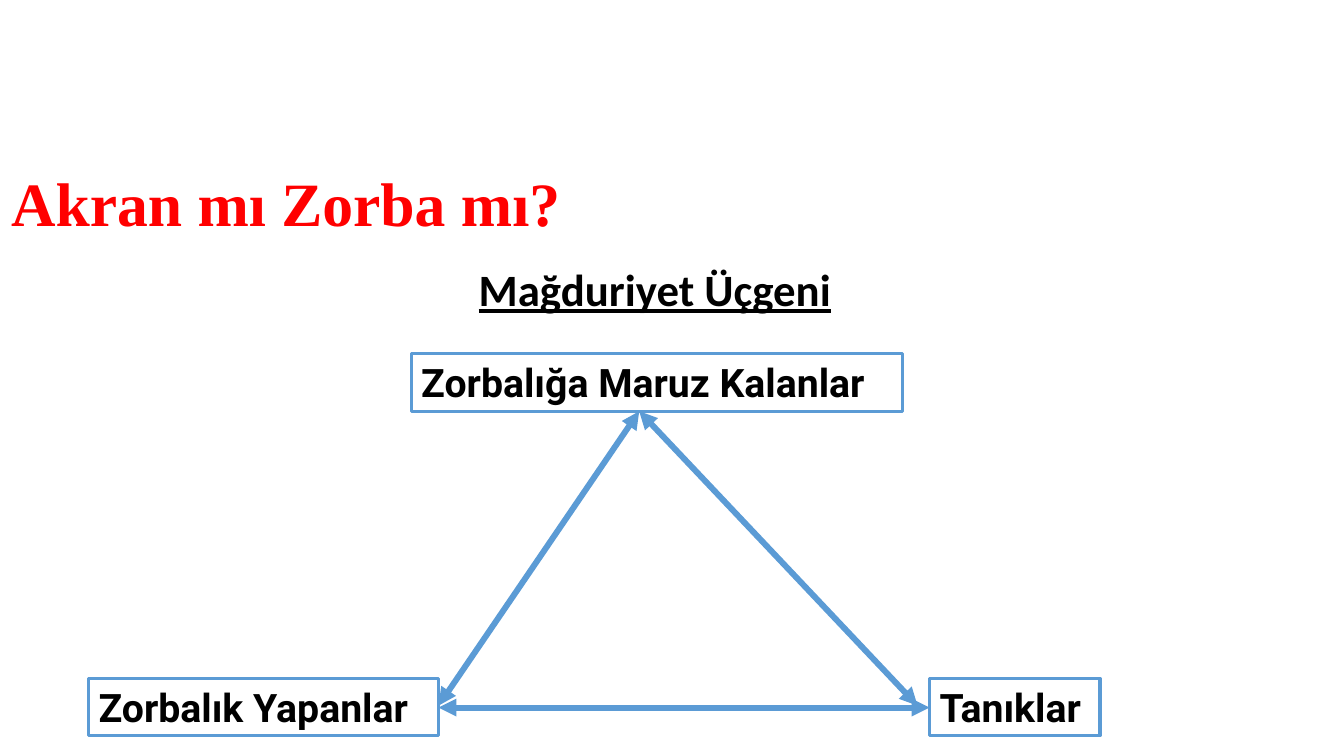
from lxml import etree
from pptx import Presentation
from pptx.dml.color import RGBColor
from pptx.enum.shapes import MSO_CONNECTOR
from pptx.enum.text import MSO_ANCHOR, PP_ALIGN
from pptx.oxml.ns import qn
from pptx.util import Inches, Pt

STRAIGHT = MSO_CONNECTOR.STRAIGHT
MIDDLE = MSO_ANCHOR.MIDDLE
LEFT = PP_ALIGN.LEFT

RED = RGBColor(0xFF, 0x00, 0x00)
BLACK = RGBColor(0x00, 0x00, 0x00)
BLUE = RGBColor(0x5B, 0x9B, 0xD5)

TITLE = "Akran mı Zorba mı?"
SUBTITLE = "Mağduriyet Üçgeni"
ROLE_HEIGHT = 0.57
ROLES = [
    ("Zorbalığa Maruz Kalanlar", 4.08, 3.51, 4.87),
    ("Zorbalık Yapanlar", 0.88, 6.73, 3.47),
    ("Tanıklar", 9.22, 6.73, 1.69),
]
ARROWS = [
    ((6.34, 4.08), (9.1, 7)),
    ((6.34, 4.08), (4.35, 7)),
    ((4.35, 7.02), (9.22, 7.02)),
]


def style(p, name, size, color):
    p.alignment = LEFT
    p.font.name = name
    p.font.size = Pt(size)
    p.font.bold = True
    p.font.color.rgb = color


def add_label(slide, text, box, name, size):
    sp = slide.shapes.add_textbox(*map(Inches, box))
    tf = sp.text_frame
    tf.word_wrap = True
    tf.text = text
    style(tf.paragraphs[0], name, size, BLACK)
    return sp


def add_arrow(slide, start, end):
    line = slide.shapes.add_connector(STRAIGHT, *map(Inches, start + end))
    line.line.color.rgb = BLUE
    line.line.width = Pt(4.25)
    ln = line.line._get_or_add_ln()
    for tag in ("a:headEnd", "a:tailEnd"):
        etree.SubElement(ln, qn(tag), type="triangle")
    etree.SubElement(line._element.spPr, qn("a:effectLst"))


def main():
    prs = Presentation()
    prs.slide_width, prs.slide_height = Inches(13.33), Inches(7.5)
    slide = prs.slides.add_slide(prs.slide_layouts[5])

    title = slide.shapes.title
    title.left, title.top = Inches(0.01), Inches(1.55)
    title.width, title.height = Inches(11.5), Inches(0.99)
    tf = title.text_frame
    tf.text = TITLE
    tf.vertical_anchor = MIDDLE
    p = tf.paragraphs[0]
    p.line_spacing = 0.9
    style(p, "Times New Roman", 44, RED)

    for text, left, top, width in ROLES:
        sp = add_label(slide, text, (left, top, width, ROLE_HEIGHT), "Roboto", 28)
        sp.line.color.rgb = BLUE
        sp.line.width = Pt(2.25)

    for start, end in ARROWS:
        add_arrow(slide, start, end)

    subtitle = add_label(slide, SUBTITLE, (4.65, 2.55, 3.77, 0.64), "Calibri", 32)
    subtitle.text_frame.paragraphs[0].font.underline = True

    prs.save("out.pptx")


if __name__ == "__main__":
    main()
